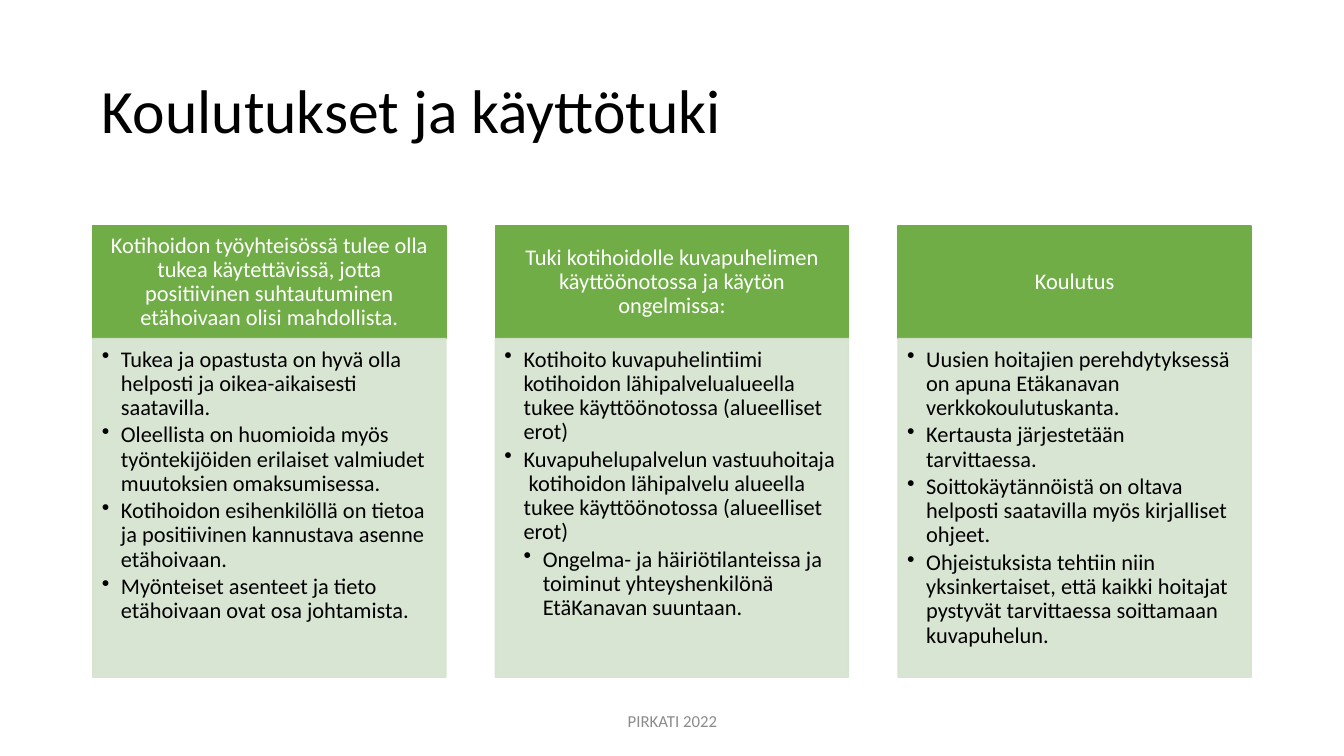
from dataclasses import dataclass

from lxml import etree
from pptx import Presentation
from pptx.dml.color import RGBColor
from pptx.enum.shapes import MSO_SHAPE
from pptx.enum.text import MSO_ANCHOR, MSO_AUTO_SIZE, PP_ALIGN
from pptx.oxml.ns import qn
from pptx.util import Inches, Pt

RECTANGLE = MSO_SHAPE.RECTANGLE
MIDDLE, TOP = MSO_ANCHOR.MIDDLE, MSO_ANCHOR.TOP
LEFT, CENTER = PP_ALIGN.LEFT, PP_ALIGN.CENTER
NO_AUTOFIT = MSO_AUTO_SIZE.NONE
TITLE_ONLY = 5


@dataclass(frozen=True)
class Theme:
    font: str = "Calibri"
    ink: str = "000000"
    white: str = "FFFFFF"
    header: str = "70AD47"
    panel: str = "D5E3CF"
    muted: str = "8C8C8C"
    title_size: int = 44
    body_size: int = 16
    footer_size: int = 12
    panel_opacity: int = 90
    indent: float = 0.19
    line_spacing: float = 0.9


THEME = Theme()

COLUMNS = [
    (
        "Kotihoidon työyhteisössä tulee olla tukea käytettävissä, jotta "
        "positiivinen suhtautuminen etähoivaan olisi mahdollista.",
        [
            (1, "Tukea ja opastusta on hyvä olla helposti ja oikea-aikaisesti saatavilla."),
            (1, "Oleellista on huomioida myös työntekijöiden erilaiset valmiudet "
                "muutoksien omaksumisessa."),
            (1, "Kotihoidon esihenkilöllä on tietoa ja positiivinen kannustava asenne "
                "etähoivaan."),
            (1, "Myönteiset asenteet ja tieto etähoivaan ovat osa johtamista."),
        ],
    ),
    (
        "Tuki kotihoidolle kuvapuhelimen käyttöönotossa ja käytön ongelmissa:",
        [
            (1, "Kotihoito kuvapuhelintiimi kotihoidon lähipalvelualueella tukee "
                "käyttöönotossa (alueelliset erot)"),
            (1, "Kuvapuhelupalvelun vastuuhoitaja  kotihoidon lähipalvelu alueella tukee "
                "käyttöönotossa (alueelliset erot)"),
            (2, "Ongelma- ja häiriötilanteissa ja toiminut yhteyshenkilönä "
                "EtäKanavan suuntaan."),
        ],
    ),
    (
        "Koulutus",
        [
            (1, "Uusien hoitajien perehdytyksessä on apuna Etäkanavan verkkokoulutuskanta."),
            (1, "Kertausta järjestetään tarvittaessa."),
            (1, "Soittokäytännöistä on oltava helposti saatavilla myös kirjalliset ohjeet."),
            (1, "Ohjeistuksista tehtiin niin yksinkertaiset, että kaikki hoitajat "
                "pystyvät tarvittaessa soittamaan kuvapuhelun."),
        ],
    ),
]


def style_para(para, size, color, align=LEFT):
    para.alignment = align
    para.line_spacing = THEME.line_spacing
    para.font.name = THEME.font
    para.font.size = Pt(size)
    para.font.color.rgb = RGBColor.from_string(color)


def set_frame(frame, anchor, insets=(0.1, 0.05, 0.1, 0.05)):
    frame.word_wrap = True
    frame.auto_size = NO_AUTOFIT
    frame.vertical_anchor = anchor
    (frame.margin_left, frame.margin_top,
     frame.margin_right, frame.margin_bottom) = map(Inches, insets)


def add_bullet(para, level):
    properties = para._p.get_or_add_pPr()
    properties.set("marL", str(Inches(THEME.indent * level)))
    properties.set("indent", str(-Inches(THEME.indent)))
    etree.SubElement(properties, qn("a:buChar"), char="•")


def add_block(page, box, color, opacity=100):
    block = page.shapes.add_shape(RECTANGLE, *map(Inches, box))
    block.shadow.inherit = False
    block.line.width = Pt(1)
    for fill in (block.fill, block.line.fill):
        fill.solid()
        fill.fore_color.rgb = RGBColor.from_string(color)
    if opacity < 100:
        for tint in block._element.spPr.iter(qn("a:srgbClr")):
            etree.SubElement(tint, qn("a:alpha"), val=str(opacity * 1000))
    return block


def add_title(page, box, text):
    title = page.shapes.title
    title.left, title.top, title.width, title.height = map(Inches, box)
    set_frame(title.text_frame, MIDDLE)
    title.text_frame.text = text
    style_para(title.text_frame.paragraphs[0], THEME.title_size, THEME.ink)


def add_column(page, box, heading, bullets):
    left, top, width, height = box
    header_height = height / 4

    header = add_block(page, (left, top, width, header_height), THEME.header)
    set_frame(header.text_frame, MIDDLE, (0.12, 0.07, 0.12, 0.07))
    header.text_frame.text = heading
    style_para(header.text_frame.paragraphs[0], THEME.body_size, THEME.white, CENTER)

    panel_box = (left, top + header_height, width, height - header_height)
    panel = add_block(page, panel_box, THEME.panel, THEME.panel_opacity)
    frame = panel.text_frame
    set_frame(frame, TOP, (0.09, 0.09, 0.12, 0.14))
    for index, (level, text) in enumerate(bullets):
        para = frame.add_paragraph() if index else frame.paragraphs[0]
        para.text = text
        para.level = level
        style_para(para, THEME.body_size, THEME.ink)
        para.space_after = Pt(2.4)
        add_bullet(para, level)


def add_columns(page, box, columns, gap):
    left, top, width, height = box
    column_width = (width - gap * (len(columns) - 1)) / len(columns)
    for index, (heading, bullets) in enumerate(columns):
        column_left = left + index * (column_width + gap)
        add_column(page, (column_left, top, column_width, height), heading, bullets)


def add_footer(page, box, text):
    footer = page.shapes.add_textbox(*map(Inches, box))
    set_frame(footer.text_frame, MIDDLE)
    footer.text_frame.text = text
    style_para(footer.text_frame.paragraphs[0], THEME.footer_size, THEME.muted, CENTER)
    footer.text_frame.paragraphs[0].line_spacing = 1.0


def main():
    deck = Presentation()
    deck.slide_width, deck.slide_height = Inches(13.33), Inches(7.5)
    page = deck.slides.add_slide(deck.slide_layouts[TITLE_ONLY])
    add_title(page, (0.91, 0.4, 11.51, 1.45), "Koulutukset ja käyttötuki")
    add_columns(page, (0.92, 2.24, 11.49, 4.48), COLUMNS, gap=0.49)
    add_footer(page, (4.42, 6.95, 4.5, 0.4), "PIRKATI 2022")
    deck.save("out.pptx")


if __name__ == "__main__":
    main()
